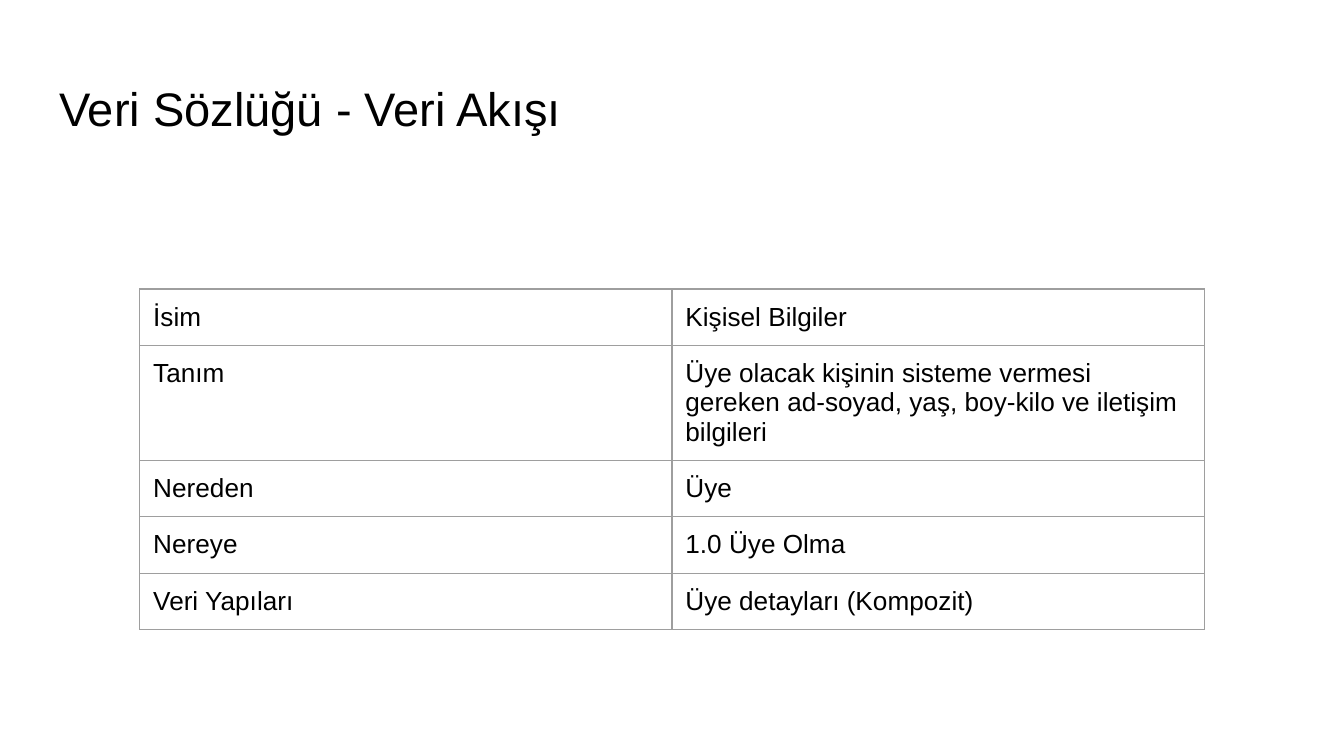
from lxml import etree
from pptx import Presentation
from pptx.dml.color import RGBColor
from pptx.enum.text import MSO_ANCHOR, PP_ALIGN
from pptx.oxml.ns import qn
from pptx.util import Inches, Pt

TOP = MSO_ANCHOR.TOP
LEFT = PP_ALIGN.LEFT
TITLE_ONLY = 5
BORDER = "9E9E9E"
MARGINS = ("margin_left", "margin_top", "margin_right", "margin_bottom")


def color(value):
    return RGBColor.from_string(value)


def write(tf, text, size):
    p = tf.paragraphs[0]
    p.alignment = LEFT
    r = p.add_run()
    r.text = text
    for name, value in {"name": "Arial", "size": Pt(size), "bold": False}.items():
        setattr(r.font, name, value)
    r.font.color.rgb = color("000000")


prs = Presentation()
prs.slide_width = Inches(10)
prs.slide_height = Inches(10) * 9 // 16
s = prs.slides.add_slide(prs.slide_layouts[TITLE_ONLY])

title = s.shapes.title
for name, value in {"left": 0.34, "top": 0.49, "width": 9.32, "height": 0.63}.items():
    setattr(title, name, Inches(value))
tf = title.text_frame
for name in MARGINS:
    setattr(tf, name, Inches(0.1))
tf.vertical_anchor = TOP
tf.word_wrap = True
write(tf, "Veri Sözlüğü - Veri Akışı", 25.2)

rows = [
    ("İsim", "Kişisel Bilgiler"),
    ("Tanım", "Üye olacak kişinin sisteme vermesi gereken ad-soyad, yaş, boy-kilo ve iletişim bilgileri"),
    ("Nereden", "Üye"),
    ("Nereye", "1.0 Üye Olma"),
    ("Veri Yapıları", "Üye detayları (Kompozit)"),
]
row_height = Inches(0.42)
table = s.shapes.add_table(len(rows), 2, Inches(1.04), Inches(2.15),
                           Inches(7.92), row_height * len(rows)).table
table.first_row = False
table.horz_banding = False

for i, row in enumerate(rows):
    table.rows[i].height = row_height
    for j, text in enumerate(row):
        cell = table.cell(i, j)
        for name in MARGINS:
            setattr(cell, name, Inches(0.1))
        cell.vertical_anchor = TOP
        write(cell.text_frame, text, 14)
        tc_pr = cell._tc.get_or_add_tcPr()
        for side in ("lnL", "lnR", "lnT", "lnB"):
            line = etree.SubElement(tc_pr, qn(f"a:{side}"), w=str(Pt(0.75)))
            fill = etree.SubElement(line, qn("a:solidFill"))
            etree.SubElement(fill, qn("a:srgbClr"), val=BORDER)
        cell.fill.background()

prs.save("out.pptx")
